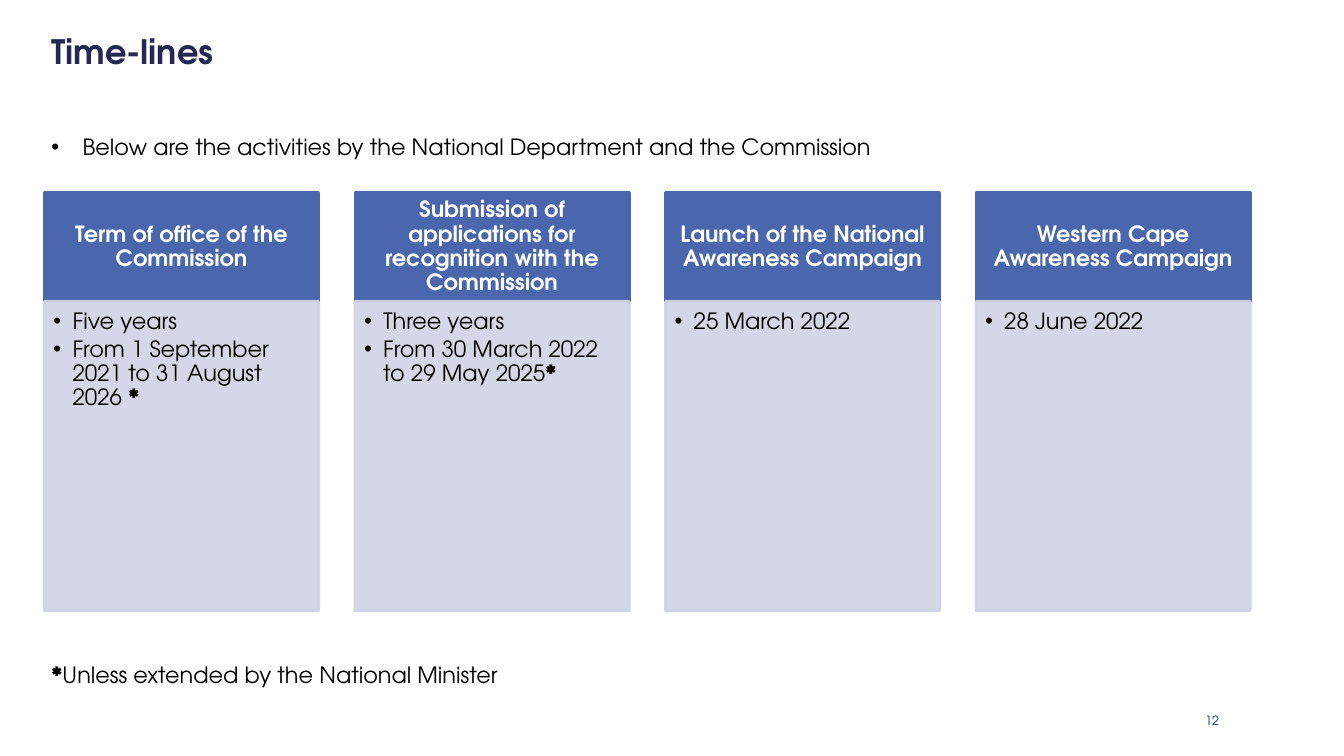
from dataclasses import dataclass

from lxml import etree
from pptx import Presentation
from pptx import util as u
from pptx.dml.color import RGBColor
from pptx.enum import shapes, text
from pptx.oxml.ns import qn

FONT = "TeX Gyre Adventor"
NAVY = RGBColor(0x24, 0x28, 0x52)
BLUE = RGBColor(0x4A, 0x66, 0xAC)
PALE = RGBColor(0xD0, 0xD3, 0xE3)
NUMBER_BLUE = RGBColor(0x00, 0x33, 0x99)
BLACK = RGBColor(0, 0, 0)
WHITE = RGBColor(255, 255, 255)

COLUMN_LEFT, COLUMN_PITCH, COLUMN_WIDTH = 0.44, 3.08, 2.72
HEADER_TOP, HEADER_HEIGHT, DETAIL_HEIGHT = 1.91, 1.08, 3.07
PALE_OPACITY = 90


@dataclass
class Activity:
    heading: str
    details: list[str]


@dataclass
class Style:
    size: float = 16
    color: RGBColor = BLACK
    bold: bool = False
    align: text.PP_ALIGN = text.PP_ALIGN.LEFT
    anchor: text.MSO_ANCHOR = text.MSO_ANCHOR.TOP
    insets: tuple[float, float, float, float] = (0.08, 0.08, 0.08, 0.08)
    line_spacing: float = 1.0
    space_after: float = 0
    bullet_indent: float = 0


ACTIVITIES = [
    Activity("Term of office of the Commission",
             ["Five years", "From 1 September 2021 to 31 August 2026 *"]),
    Activity("Submission of applications for recognition with the Commission",
             ["Three years", "From 30 March 2022 to 29 May 2025*"]),
    Activity("Launch of the National Awareness Campaign", ["25 March 2022"]),
    Activity("Western Cape Awareness Campaign", ["28 June 2022"]),
]

TITLE = Style(size=24, color=NAVY, bold=True, anchor=text.MSO_ANCHOR.MIDDLE)
NUMBER = Style(size=9, color=NUMBER_BLUE, align=text.PP_ALIGN.RIGHT,
               anchor=text.MSO_ANCHOR.MIDDLE, insets=(0.08, 0.08, 0, 0))
INTRO = Style(bullet_indent=0.31)
FOOTNOTE = Style()
HEADER = Style(color=WHITE, bold=True, align=text.PP_ALIGN.CENTER,
               anchor=text.MSO_ANCHOR.MIDDLE, insets=(0.12, 0.07, 0.12, 0.07),
               line_spacing=0.9)
DETAIL = Style(insets=(0.09, 0.09, 0.12, 0.14), line_spacing=0.9,
               space_after=2.4, bullet_indent=0.19)


def add_bullet(paragraph, indent: float) -> None:
    properties = paragraph._p.get_or_add_pPr()
    properties.set("marL", str(u.Inches(indent)))
    properties.set("indent", str(u.Inches(-indent)))
    bullet_font = etree.SubElement(properties, qn("a:buFont"))
    bullet_font.set("typeface", "Arial")
    etree.SubElement(properties, qn("a:buChar")).set("char", "•")


def write(shape, lines: list[str], style: Style) -> None:
    frame = shape.text_frame
    frame.word_wrap = True
    frame.vertical_anchor = style.anchor
    (frame.margin_left, frame.margin_top,
     frame.margin_right, frame.margin_bottom) = map(u.Inches, style.insets)
    frame.text = "\n".join(lines)
    for paragraph, line in zip(frame.paragraphs, lines):
        paragraph.alignment = style.align
        paragraph.line_spacing = style.line_spacing
        paragraph.space_after = u.Pt(style.space_after)
        if style.bullet_indent:
            add_bullet(paragraph, style.bullet_indent)
        # Asterisks stand out in bold within regular text
        before, star, after = line.partition("*")
        paragraph.text = ""
        for part in filter(None, (before, star, after)):
            run = paragraph.add_run()
            run.text = part
            run.font.name = FONT
            run.font.size = u.Pt(style.size)
            run.font.bold = style.bold or part == "*"
            run.font.color.rgb = style.color


def add_label(slide, left: float, top: float, width: float, height: float,
              label: str, style: Style) -> None:
    box = slide.shapes.add_textbox(*map(u.Inches, (left, top, width, height)))
    write(box, [label], style)


def add_panel(slide, left: float, top: float, height: float, color: RGBColor,
              lines: list[str], style: Style, opacity: int = 100) -> None:
    panel = slide.shapes.add_shape(
        shapes.MSO_SHAPE.RECTANGLE,
        *map(u.Inches, (left, top, COLUMN_WIDTH, height)))
    panel.shadow.inherit = False
    panel.fill.solid()
    panel.fill.fore_color.rgb = color
    panel.line.color.rgb = color
    panel.line.width = u.Pt(2)
    if opacity < 100:
        for tint in panel._element.spPr.iter(qn("a:srgbClr")):
            etree.SubElement(tint, qn("a:alpha")).set("val", str(opacity * 1000))
    write(panel, lines, style)


def main() -> None:
    deck = Presentation()
    deck.slide_width, deck.slide_height = u.Inches(13.33), u.Inches(7.5)
    slide = deck.slides.add_slide(deck.slide_layouts[6])

    # Title, introduction, footnote and slide number
    add_label(slide, 0.43, 0.2, 12.54, 0.61, "Time-lines", TITLE)
    add_label(slide, 0.43, 1.24, 12.54, 0.45,
              "Below are the activities by the National Department and the Commission",
              INTRO)
    add_label(slide, 0.43, 6.48, 10, 0.45,
              "*Unless extended by the National Minister", FOOTNOTE)
    add_label(slide, 11.34, 6.98, 0.75, 0.25, "12", NUMBER)

    # One column per activity
    for column, activity in enumerate(ACTIVITIES):
        left = COLUMN_LEFT + column * COLUMN_PITCH
        add_panel(slide, left, HEADER_TOP, HEADER_HEIGHT, BLUE,
                  [activity.heading], HEADER)
        add_panel(slide, left, HEADER_TOP + HEADER_HEIGHT, DETAIL_HEIGHT, PALE,
                  activity.details, DETAIL, PALE_OPACITY)

    deck.save("out.pptx")


if __name__ == "__main__":
    main()
